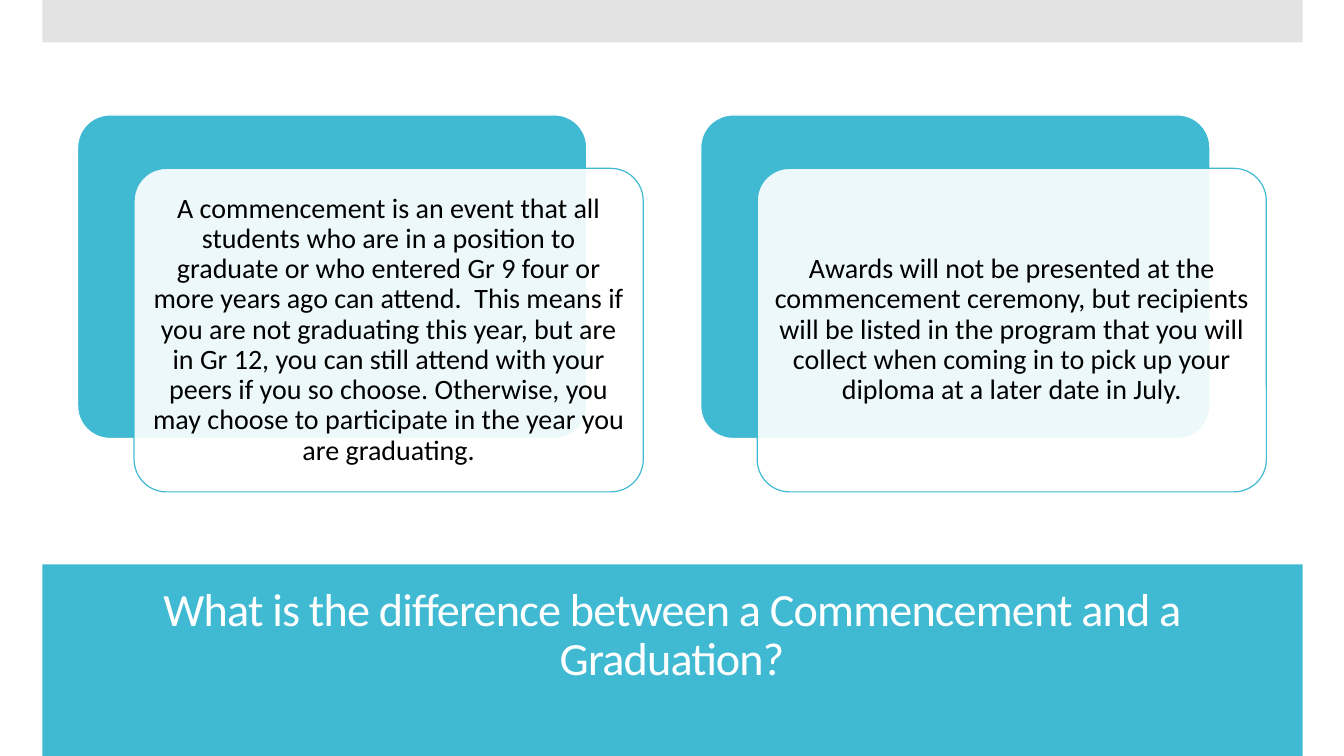
from lxml import etree
from pptx import Presentation, util as u
from pptx.dml.color import RGBColor
from pptx.enum import shapes, text
from pptx.oxml.ns import qn

COLORS = {"teal": "40BAD2", "gray": "C8C8C8", "white": "FFFFFF", "black": "000000"}
TITLE = "What is the difference between a Commencement and a Graduation?"
CARDS = [
    "A commencement is an event that all students who are in a position to "
    "graduate or who entered Gr 9 four or more years ago can attend.  This means "
    "if you are not graduating this year, but are in Gr 12, you can still attend "
    "with your peers if you so choose. Otherwise, you may choose to participate "
    "in the year you are graduating.",
    "Awards will not be presented at the commencement ceremony, but recipients "
    "will be listed in the program that you will collect when coming in to pick "
    "up your diploma at a later date in July.",
]
CARD_LEFT, CARD_TOP, CARD_STEP = 0.77, 1.14, 6.18
CARD_SIZE = (5.05, 3.21)
FRONT_SHIFT = (0.56, 0.53)
TEXT_MARGIN = 0.09


class SlideBuilder:
    """Hold the slide style and draw each kind of element on the current page."""

    def __init__(self, page, font="Calibri"):
        self.page = page
        self.font = font

    def color(self, name):
        return RGBColor.from_string(COLORS[name])

    def shape(self, kind, place, fill, line=None, alpha=None):
        shape = self.page.shapes.add_shape(kind, *map(u.Inches, place))
        shape.shadow.inherit = False
        shape.fill.solid()
        shape.fill.fore_color.rgb = self.color(fill)
        if alpha:
            tint = shape.element.spPr.find(qn("a:solidFill")).find(qn("a:srgbClr"))
            etree.SubElement(tint, qn("a:alpha")).set("val", str(alpha * 1000))
        if line:
            shape.line.color.rgb = self.color(line)
            shape.line.width = u.Pt(0.85)
        else:
            shape.line.fill.background()
        return shape

    def band(self, place, fill, alpha=None):
        self.shape(shapes.MSO_SHAPE.RECTANGLE, place, fill, alpha=alpha)

    def rounded(self, place, fill, line, alpha=None):
        panel = self.shape(shapes.MSO_SHAPE.ROUNDED_RECTANGLE, place, fill, line, alpha)
        panel.adjustments[0] = 0.1

    def fill_text(self, box, place, wording, size, color, spacing=None, margin=None):
        box.left, box.top, box.width, box.height = map(u.Inches, place)
        frame = box.text_frame
        layout = {"word_wrap": True, "auto_size": text.MSO_AUTO_SIZE.NONE,
                  "vertical_anchor": text.MSO_ANCHOR.MIDDLE}
        if margin is not None:
            for side in ("left", "right", "top", "bottom"):
                layout[f"margin_{side}"] = u.Inches(margin)
        for name, value in layout.items():
            setattr(frame, name, value)
        para = frame.paragraphs[0]
        para.alignment = text.PP_ALIGN.CENTER
        para.line_spacing = 0.9
        span = para.add_run()
        span.text = wording
        for name, value in {"name": self.font, "size": u.Pt(size)}.items():
            setattr(span.font, name, value)
        span.font.color.rgb = self.color(color)
        if spacing:
            span.font._element.set("spc", str(round(spacing * 100)))

    def title(self, place, wording):
        box = self.page.shapes.title
        box.element.getparent().append(box.element)
        self.fill_text(box, place, wording, 33, "white", spacing=-0.6)

    def card(self, left, top, wording):
        width, height = CARD_SIZE
        self.rounded((left, top, width, height), "teal", "white")
        left, top = left + FRONT_SHIFT[0], top + FRONT_SHIFT[1]
        self.rounded((left, top, width, height), "white", "teal", alpha=90)
        place = (left + TEXT_MARGIN, top + TEXT_MARGIN,
                 width - 2 * TEXT_MARGIN, height - 2 * TEXT_MARGIN)
        box = self.page.shapes.add_textbox(*map(u.Inches, place))
        self.fill_text(box, place, wording, 20, "black", margin=0.08)


def main():
    deck = Presentation()
    deck.slide_width, deck.slide_height = u.Inches(13.33), u.Inches(7.5)
    builder = SlideBuilder(deck.slides.add_slide(deck.slide_layouts[5]))
    builder.band((0.42, 5.6, 12.5, 1.9), "teal")
    builder.title((0.7, 5.75, 11.93, 1.12), TITLE)
    builder.band((0.42, 0, 12.5, 0.42), "gray", alpha=50)
    for index, wording in enumerate(CARDS):
        builder.card(CARD_LEFT + index * CARD_STEP, CARD_TOP, wording)
    deck.save("out.pptx")


if __name__ == "__main__":
    main()
